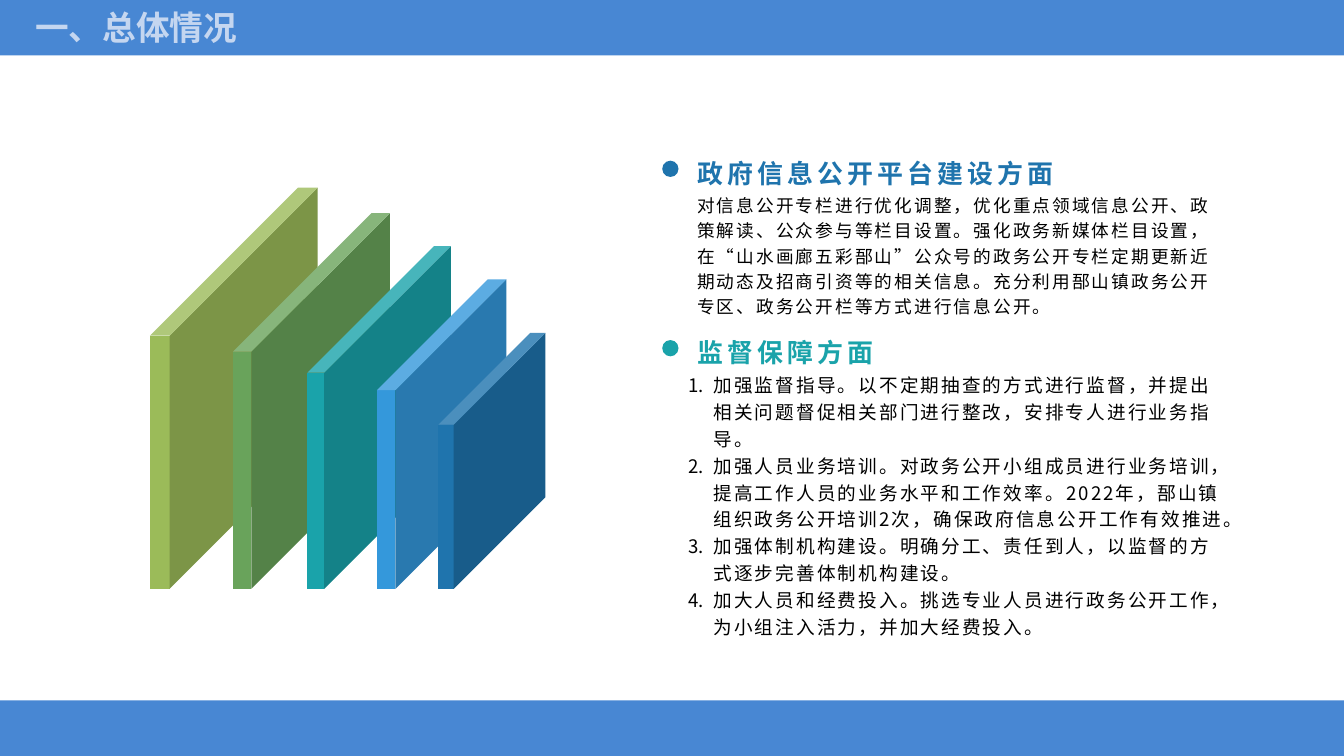
import pptx
import pptx.dml.color
import pptx.enum.shapes
import pptx.enum.text
import pptx.oxml
import pptx.oxml.ns
import pptx.util

Cm = pptx.util.Cm
Pt = pptx.util.Pt
RGBColor = pptx.dml.color.RGBColor
Shape = pptx.enum.shapes.MSO_SHAPE
Anchor = pptx.enum.text.MSO_ANCHOR
qn = pptx.oxml.ns.qn

BAR_BLUE = RGBColor(0x48, 0x87, 0xD3)
TITLE_BLUE = RGBColor(0xC4, 0xD6, 0xF0)
LIME = RGBColor(0x9B, 0xBB, 0x59)
GREEN = RGBColor(0x69, 0xA3, 0x5B)
TEAL = RGBColor(0x1A, 0xA3, 0xAA)
SKY = RGBColor(0x34, 0x98, 0xDB)
NAVY = RGBColor(0x1F, 0x74, 0xAD)
BLACK = RGBColor(0, 0, 0)

WIDTH, HEIGHT = 33.87, 19.05
BAR_HEIGHT = 1.4
CUBE_BOTTOM = 14.84
CUBE_RATIO = 0.418
TEXT_LEFT = 17.32

PLATFORM_TEXT = (
    "对信息公开专栏进行优化调整，优化重点领域信息公开、政策解读、公众参与等栏目设置。"
    "强化政务新媒体栏目设置，在“山水画廊五彩郚山”公众号的政务公开专栏定期更新近期动态及"
    "招商引资等的相关信息。充分利用郚山镇政务公开专区、政务公开栏等方式进行信息公开。"
)
SUPERVISION_ITEMS = [
    "加强监督指导。以不定期抽查的方式进行监督，并提出相关问题督促相关部门进行整改，"
    "安排专人进行业务指导。",
    "加强人员业务培训。对政务公开小组成员进行业务培训，提高工作人员的业务水平和工作效率。"
    "2022年，郚山镇组织政务公开培训2次，确保政府信息公开工作有效推进。",
    "加强体制机构建设。明确分工、责任到人，以监督的方式逐步完善体制机构建设。",
    "加大人员和经费投入。挑选专业人员进行政务公开工作，为小组注入活力，并加大经费投入。",
]


class SlideBuilder:
    font = "Noto Sans CJK SC"

    def __init__(self, page):
        self.page = page

    def shape(self, kind, left, top, width, height, color):
        shape = self.page.shapes.add_shape(
            kind, Cm(left), Cm(top), Cm(width), Cm(height))
        shape.shadow.inherit = False
        shape.fill.solid()
        shape.fill.fore_color.rgb = color
        shape.line.fill.background()
        return shape

    def place(self, box, left, top, width, height):
        box.left, box.top = Cm(left), Cm(top)
        box.width, box.height = Cm(width), Cm(height)

    def fill_text(self, box, text, size, color, bold=False, tracking=0,
                  line_spacing=1.0, anchor=Anchor.TOP, insets=(0.13, 0.13), wrap=True):
        frame = box.text_frame
        frame.text = text
        frame.word_wrap = wrap
        frame.auto_size = pptx.enum.text.MSO_AUTO_SIZE.NONE
        frame.vertical_anchor = anchor
        frame.margin_left = frame.margin_right = Cm(0.25)
        frame.margin_top, frame.margin_bottom = map(Cm, insets)
        for para in frame.paragraphs:
            para.alignment = pptx.enum.text.PP_ALIGN.LEFT
            para.line_spacing = line_spacing
            para.space_before = Pt(0)
            for span in para.runs:
                span.font.name = self.font
                span.font.size = Pt(size)
                span.font.bold = bold
                span.font.color.rgb = color
                properties = span._r.get_or_add_rPr()
                properties.set("spc", str(int(tracking * 100)))
                latin = properties.find(qn("a:latin"))
                east_asian = pptx.oxml.parse_xml(
                    f'<a:ea {pptx.oxml.ns.nsdecls("a")} typeface="{self.font}"/>')
                latin.addnext(east_asian)

    def title(self, text):
        box = self.page.shapes.title
        self.place(box, 0.64, 0.05, 5.61, 1.27)
        self.fill_text(box, text, 24, TITLE_BLUE, bold=True, wrap=False)
        # Bring the title in front of the top bar
        box.element.getparent().append(box.element)

    def heading(self, text, top, color):
        self.shape(Shape.OVAL, 16.69, top + 0.32, 0.41, 0.41, color)
        box = self.page.shapes.add_textbox(
            Cm(TEXT_LEFT), Cm(top), Cm(13.61), Cm(1.02))
        self.fill_text(box, text, 18.5, color, bold=True, tracking=3,
                       line_spacing=1.1, anchor=Anchor.BOTTOM, insets=(0.13, 0))

    def paragraph(self, text, top, height):
        box = self.page.shapes.add_textbox(
            Cm(TEXT_LEFT), Cm(top), Cm(13.87), Cm(height))
        self.fill_text(box, text, 12.6, BLACK, tracking=1.5,
                       line_spacing=1.2, insets=(0, 0.13))

    def numbered_list(self, items, left, top, width, height):
        box = self.page.placeholders[1]
        self.place(box, left, top, width, height)
        self.fill_text(box, "\n".join(items), 13.3, BLACK, tracking=1.5,
                       line_spacing=1.2, insets=(0, 0.13))
        indent = Cm(0.64)
        for para in box.text_frame.paragraphs:
            properties = para._p.get_or_add_pPr()
            properties.set("marL", str(int(indent)))
            properties.set("indent", str(-int(indent)))
            for tag, name, value in (("buFont", "typeface", "+mj-lt"),
                                     ("buAutoNum", "type", "arabicPeriod")):
                properties.append(pptx.oxml.parse_xml(
                    f'<a:{tag} {pptx.oxml.ns.nsdecls("a")} {name}="{value}"/>'))


def main():
    deck = pptx.Presentation()
    deck.slide_width, deck.slide_height = Cm(WIDTH), Cm(HEIGHT)
    page = deck.slides.add_slide(deck.slide_layouts[1])
    builder = SlideBuilder(page)

    # Row of shrinking panels on a shared baseline
    panels = [
        (3.78, 10.11, 0.883, LIME),
        (5.87, 9.47, 0.883, GREEN),
        (7.75, 8.64, 0.883, TEAL),
        (9.5, 7.8, 0.857, SKY),
        (11.05, 6.45, 0.857, NAVY),
    ]
    for left, height, depth, color in panels:
        cube = builder.shape(Shape.CUBE, left, CUBE_BOTTOM - height,
                             height * CUBE_RATIO, height, color)
        cube.adjustments[0] = depth

    # Two text sections
    builder.heading("政府信息公开平台建设方面", 3.73, NAVY)
    builder.paragraph(PLATFORM_TEXT, 4.8, 3.45)
    builder.heading("监督保障方面", 8.25, TEAL)
    builder.numbered_list(SUPERVISION_ITEMS, 17.09, 9.32, 14.07, 6.35)

    # Top and bottom bars, then the title
    for top in (0, HEIGHT - BAR_HEIGHT):
        builder.shape(Shape.RECTANGLE, 0, top, WIDTH, BAR_HEIGHT, BAR_BLUE)
    builder.title("一、总体情况")

    deck.save("out.pptx")


if __name__ == "__main__":
    main()
